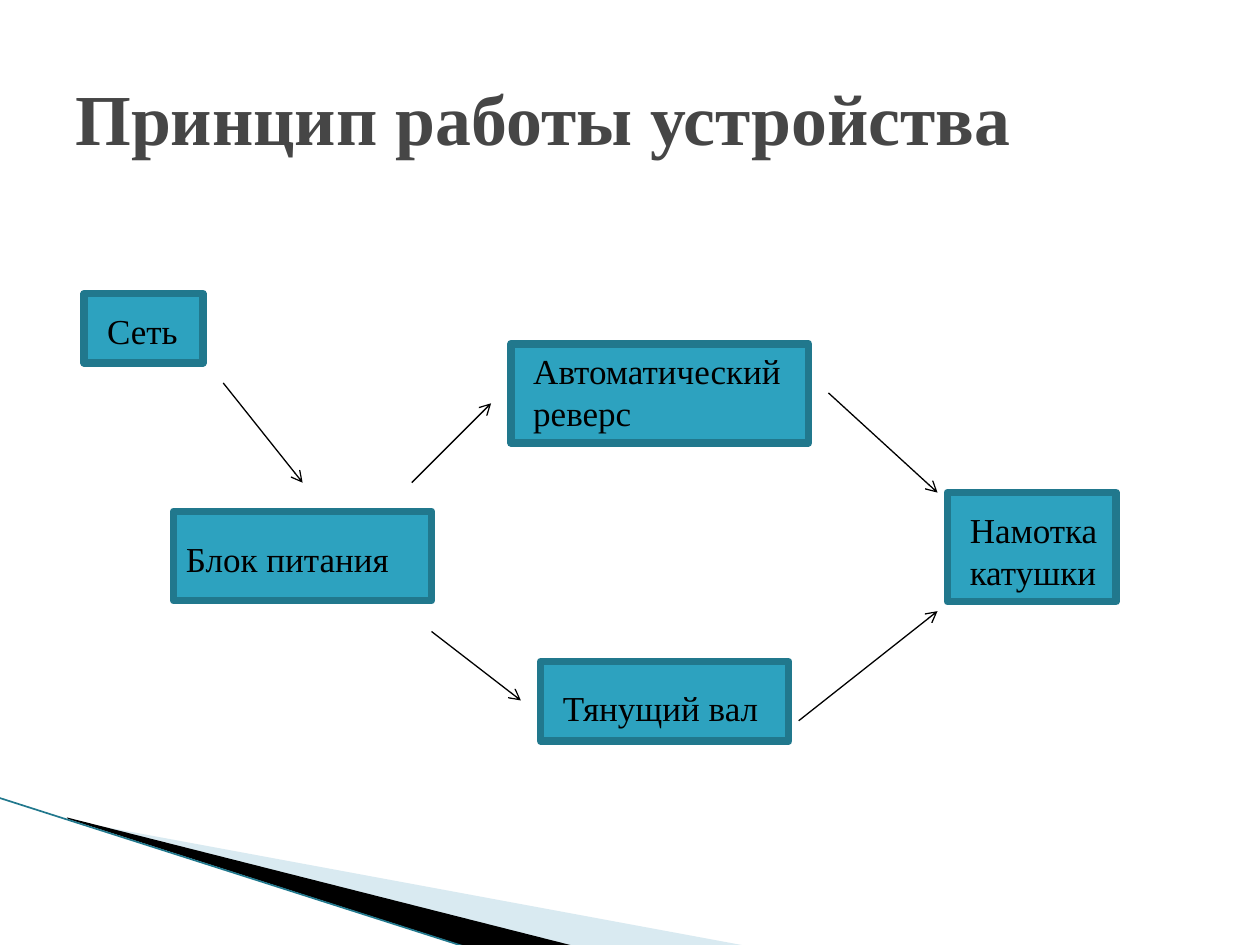
from typing import NamedTuple

from lxml import etree
from pptx import Presentation
from pptx import util as u
from pptx.dml.color import RGBColor
from pptx.enum import shapes, text
from pptx.oxml.ns import qn

FONT = "Times New Roman"
COLORS = {
    "title": "464646",
    "ink": "000000",
    "box": "2DA2BF",
    "border": "21788D",
    "wedge": "A0CBDC",
}


class Area(NamedTuple):
    left: float
    top: float
    width: float
    height: float


class Block(NamedTuple):
    label: str
    box: Area
    label_area: Area


class Line(NamedTuple):
    x1: float
    y1: float
    x2: float
    y2: float


class Wedge(NamedTuple):
    points: list[tuple[float, float]]
    color: str
    opacity: int


TITLE_AREA = Area(1.27, 0.76, 22.86, 3.18)
BLOCKS = [
    Block("Сеть", Area(1.7, 5.92, 2.39, 1.4), Area(1.91, 6.12, 3.99, 1.12)),
    Block("Блок питания", Area(3.5, 10.31, 5.2, 1.8), Area(3.5, 10.72, 5, 1.12)),
    Block("Автоматический реверс", Area(10.3, 6.93, 6, 2), Area(10.5, 6.93, 6, 1.96)),
    Block("Тянущий вал", Area(10.9, 13.34, 5, 1.6), Area(11.1, 13.72, 4.6, 1.12)),
    Block("Намотка катушки", Area(19.1, 9.93, 3.4, 2.2), Area(19.3, 10.13, 3.91, 1.96)),
]
ARROWS = [
    Line(4.5, 7.72, 6.1, 9.73),
    Line(8.3, 9.73, 9.9, 8.13),
    Line(8.7, 12.73, 10.5, 14.12),
    Line(16.7, 7.92, 18.9, 9.93),
    Line(16.1, 14.53, 18.9, 12.32),
]
WEDGES = [
    Wedge([(1.4, 16.54), (15.11, 19.08), (11.58, 19.08), (1.4, 16.51)], "wedge", 40),
    Wedge([(1.35, 16.48), (11.61, 19.08), (9.45, 19.1), (1.37, 16.51)], "ink", 100),
]
EDGE = Line(-0.03, 16.08, 9.42, 19.1)


def rgb(name: str) -> RGBColor:
    return RGBColor.from_string(COLORS[name])


def cm(values) -> list[u.Length]:
    return [u.Cm(v) for v in values]


def add_text(s, area: Area, content: str, size: float, color: str,
             bold: bool = False, anchor=text.MSO_ANCHOR.TOP) -> None:
    tf = s.shapes.add_textbox(*cm(area)).text_frame
    tf.word_wrap = True
    tf.vertical_anchor = anchor
    p = tf.paragraphs[0]
    r = p.add_run()
    r.text = content
    r.font.name = FONT
    r.font.size = u.Pt(size)
    r.font.bold = bold
    r.font.color.rgb = rgb(color)


def add_block(s, block: Block) -> None:
    sp = s.shapes.add_shape(shapes.MSO_SHAPE.RECTANGLE, *cm(block.box))
    sp.shadow.inherit = False
    sp.fill.solid()
    sp.fill.fore_color.rgb = rgb("box")
    sp.line.color.rgb = rgb("border")
    sp.line.width = u.Pt(4.33)
    etree.SubElement(sp.line._get_or_add_ln(), qn("a:round"))
    add_text(s, block.label_area, block.label, 20, "ink")


def add_line(s, line: Line, color: str, width: float, arrow: bool = False) -> None:
    cxn = s.shapes.add_connector(shapes.MSO_CONNECTOR.STRAIGHT, *cm(line))
    cxn.line.color.rgb = rgb(color)
    cxn.line.width = u.Pt(width)
    if arrow:
        etree.SubElement(cxn.line._get_or_add_ln(), qn("a:tailEnd"), type="arrow")
    etree.SubElement(cxn._element.spPr, qn("a:effectLst"))


def add_wedge(s, wedge: Wedge) -> None:
    start, *rest = [tuple(cm(point)) for point in wedge.points]
    builder = s.shapes.build_freeform(*start)
    builder.add_line_segments(rest)
    sp = builder.convert_to_shape()
    sp.shadow.inherit = False
    sp.line.fill.background()
    sp.fill.solid()
    sp.fill.fore_color.rgb = rgb(wedge.color)
    if wedge.opacity < 100:
        clr = sp._element.spPr.find(qn("a:solidFill"))[0]
        etree.SubElement(clr, qn("a:alpha"), val=str(wedge.opacity * 1000))


def main() -> None:
    prs = Presentation()
    prs.slide_width, prs.slide_height = u.Cm(25.4), u.Cm(19.05)
    s = prs.slides.add_slide(prs.slide_layouts[6])
    for wedge in WEDGES:
        add_wedge(s, wedge)
    add_line(s, EDGE, "border", 0.95)
    add_text(s, TITLE_AREA, "Принцип работы устройства", 41, "title",
             bold=True, anchor=text.MSO_ANCHOR.MIDDLE)
    for block in BLOCKS:
        add_block(s, block)
    for arrow in ARROWS:
        add_line(s, arrow, "ink", 0.75, arrow=True)
    prs.save("out.pptx")


if __name__ == "__main__":
    main()
